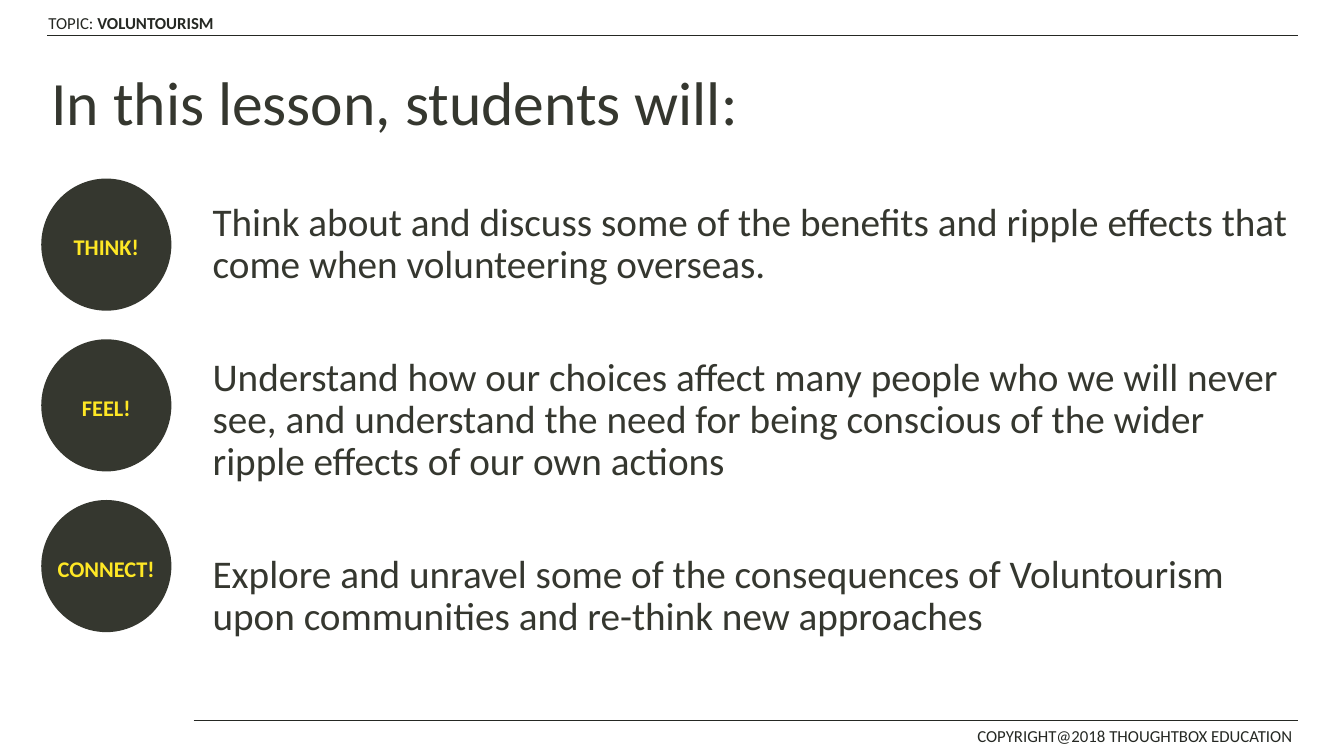
from dataclasses import dataclass

from lxml import etree
from pptx import Presentation
from pptx import util as u
from pptx.dml.color import RGBColor
from pptx.enum import shapes, text
from pptx.oxml.ns import qn


@dataclass(frozen=True)
class Theme:
    face: str = "Calibri"
    dark: str = "35372F"
    rule: str = "252823"
    glow: str = "FEE725"
    head: int = 44
    body: int = 28
    badge: int = 16
    small: int = 12


THEME = Theme()

GOALS = [
    "Think about and discuss some of the benefits and ripple effects that "
    "come when volunteering overseas.",
    "Understand how our choices affect many people who we will never see, "
    "and understand the need for being conscious of the wider ripple effects "
    "of our own actions",
    "Explore and unravel some of the consequences of Voluntourism upon "
    "communities and re-think new approaches",
]
BADGES = ["THINK!", "FEEL!", "CONNECT!"]


def style(para, size, color):
    para.font.name = THEME.face
    para.font.size = u.Pt(size)
    para.font.color.rgb = RGBColor.from_string(color)


def add_box(slide, left, top, width, height, wrap=True):
    box = slide.shapes.add_textbox(u.Cm(left), u.Cm(top), u.Cm(width), u.Cm(height))
    box.text_frame.word_wrap = wrap
    return box.text_frame


def add_rule(slide, left, right, y):
    line = slide.shapes.add_connector(
        shapes.MSO_CONNECTOR.STRAIGHT, u.Cm(left), u.Cm(y), u.Cm(right), u.Cm(y))
    line.line.color.rgb = RGBColor.from_string(THEME.rule)
    line.line.width = u.Pt(1)
    etree.SubElement(line._element.spPr, qn("a:effectLst"))


def add_title(slide, words):
    title = slide.shapes.title
    title.left, title.top = u.Cm(1.04), u.Cm(0.81)
    title.width, title.height = u.Cm(29.21), u.Cm(3.68)
    frame = title.text_frame
    frame.text = words
    frame.auto_size = text.MSO_AUTO_SIZE.NONE
    frame.vertical_anchor = text.MSO_ANCHOR.MIDDLE
    para = frame.paragraphs[0]
    para.alignment = text.PP_ALIGN.LEFT
    para.line_spacing = 0.9
    style(para, THEME.head, THEME.dark)


def add_goals(slide, goals):
    frame = add_box(slide, 5.11, 4.98, 27.71, 12.09)
    for i, goal in enumerate(goals):
        para = frame.paragraphs[0] if i == 0 else frame.add_paragraph()
        para.text = goal
        para.line_spacing = 0.9
        if i:
            para.space_before = u.Pt(50)
        style(para, THEME.body, THEME.dark)


def add_badge(slide, top, word):
    disc = slide.shapes.add_shape(
        shapes.MSO_SHAPE.OVAL, u.Cm(1.04), u.Cm(top), u.Cm(3.28), u.Cm(3.33))
    disc.shadow.inherit = False
    disc.fill.solid()
    disc.fill.fore_color.rgb = RGBColor.from_string(THEME.dark)
    disc.line.fill.background()
    frame = disc.text_frame
    frame.text = word
    frame.word_wrap = False
    frame.vertical_anchor = text.MSO_ANCHOR.MIDDLE
    para = frame.paragraphs[0]
    para.alignment = text.PP_ALIGN.CENTER
    para.line_spacing = 1.15
    style(para, THEME.badge, THEME.glow)
    para.font.bold = True


def add_frame(slide):
    # Header with topic
    para = add_box(slide, 0.97, 0.2, 4.85, 0.77, wrap=False).paragraphs[0]
    para.add_run().text = "TOPIC: "
    topic = para.add_run()
    topic.text = "VOLUNTOURISM"
    topic.font.bold = True
    style(para, THEME.small, THEME.rule)
    add_rule(slide, 1.19, 32.72, 0.89)

    # Footer with copyright
    para = add_box(slide, 24.38, 18.16, 8.64, 0.77).paragraphs[0]
    para.text = "COPYRIGHT@2018 THOUGHTBOX EDUCATION"
    style(para, THEME.small, THEME.rule)
    add_rule(slide, 4.88, 32.72, 18.16)


def main():
    deck = Presentation()
    deck.slide_width, deck.slide_height = u.Cm(33.87), u.Cm(19.05)
    slide = deck.slides.add_slide(deck.slide_layouts.get_by_name("Title Only"))

    add_frame(slide)
    add_title(slide, "In this lesson, students will:")
    add_goals(slide, GOALS)

    # Column of evenly spaced badges
    for i, word in enumerate(BADGES):
        add_badge(slide, 4.5 + 4.05 * i, word)

    deck.save("out.pptx")


if __name__ == "__main__":
    main()
